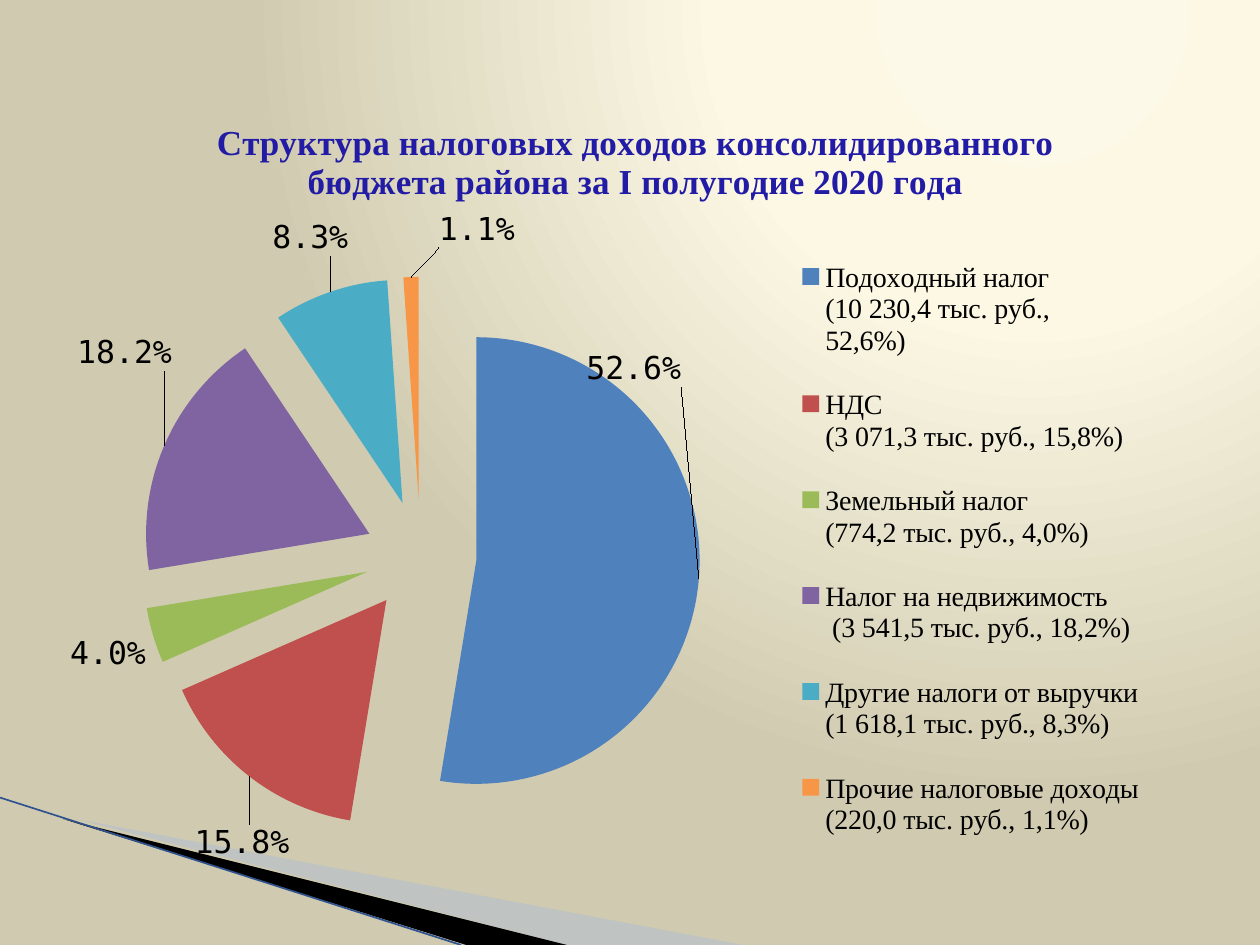
from dataclasses import dataclass

from lxml import etree
from pptx import Presentation
from pptx.chart.data import CategoryChartData
from pptx.dml.color import RGBColor
from pptx.enum.chart import XL_CHART_TYPE, XL_LABEL_POSITION, XL_LEGEND_POSITION
from pptx.enum.shapes import MSO_CONNECTOR
from pptx.oxml.ns import qn
from pptx.util import Inches, Pt

PIE = XL_CHART_TYPE.PIE
RIGHT = XL_LEGEND_POSITION.RIGHT
BEST = XL_LABEL_POSITION.BEST_FIT
STRAIGHT = MSO_CONNECTOR.STRAIGHT

COLS, ROWS = 100, 75
CELL = Inches(0.1)

TITLE = ("Структура налоговых доходов консолидированного "
         "бюджета района за I полугодие 2020 года")

# name, share, slice colour, label shift in percent of the chart
TAXES = [
    ("Подоходный налог\n(10 230,4 тыс. руб.,\n52,6%)", 0.526, "4F81BD", (-10, -27.2)),
    ("НДС\n(3 071,3 тыс. руб., 15,8%)", 0.158, "C0504D", (3.7, 5.5)),
    ("Земельный налог\n(774,2 тыс. руб., 4,0%)", 0.04, "9BBB59", (0, -0.2)),
    ("Налог на недвижимость\n (3 541,5 тыс. руб., 18,2%)", 0.182, "8064A2", (1.2, -9.2)),
    ("Другие налоги от выручки\n(1 618,1 тыс. руб., 8,3%)", 0.083, "4BACC6", (1.7, -3.7)),
    ("Прочие налоговые доходы\n(220,0 тыс. руб., 1,1%)", 0.011, "F79646", (5.5, -2.8)),
]


@dataclass(frozen=True)
class Theme:
    glow: tuple = ((0, "FDF9E8"), (40, "FCF8E4"), (100, "D0CBB0"))
    veil: str = "A7B9DB"
    dark: str = "000000"
    edge: str = "30538F"
    title: str = "221BA5"
    serif: str = "Times New Roman"
    mono: str = "DejaVu Sans Mono"
    big: int = 20
    mid: int = 18
    small: int = 16


def sub(node, tag, **attrs):
    return etree.SubElement(node, qn(tag), {k: str(v) for k, v in attrs.items()})


def style(font, size, face, color, bold=False):
    font.size, font.name, font.bold = Pt(size), face, bold
    font.color.rgb = RGBColor.from_string(color)


def place(node, index, x, y, w=None, h=None, inner=False, edge=True):
    """Give a chart part a manual layout, in percent of the chart."""
    for old in node.findall(qn("c:layout")):
        node.remove(old)
    layout = etree.Element(qn("c:layout"))
    node.insert(index, layout)
    box = sub(layout, "c:manualLayout")
    if inner:
        sub(box, "c:layoutTarget", val="inner")
    if edge:
        sub(box, "c:xMode", val="edge")
        sub(box, "c:yMode", val="edge")
    for tag, val in (("x", x), ("y", y), ("w", w), ("h", h)):
        if val is not None:
            sub(box, "c:" + tag, val=val / 100)


class Page:
    def __init__(self, deck, theme):
        self.theme = theme
        self.slide = deck.slides.add_slide(deck.slide_layouts[6])
        self.shapes = self.slide.shapes

    def back(self):
        self.slide.background.fill.gradient()
        grad = self.slide.background._cSld.find(".//" + qn("a:gradFill"))
        for child in list(grad):
            grad.remove(child)
        stops = sub(grad, "a:gsLst")
        for pos, color in self.theme.glow:
            sub(sub(stops, "a:gs", pos=pos * 1000), "a:srgbClr", val=color)
        ring = sub(grad, "a:path", path="circle")
        sub(ring, "a:fillToRect", l=65000, t=0, r=0, b=98000)

    def wedge(self, points, color, alpha=100):
        pen = self.shapes.build_freeform(*points[0], scale=CELL)
        pen.add_line_segments(points[1:], close=True)
        shape = pen.convert_to_shape()
        shape.shadow.inherit = False
        shape.line.fill.background()
        shape.fill.solid()
        shape.fill.fore_color.rgb = RGBColor.from_string(color)
        if alpha < 100:
            tone = shape._element.spPr.find(".//" + qn("a:srgbClr"))
            sub(tone, "a:alpha", val=alpha * 1000)

    def line(self, start, end, color, width):
        ends = [int(v * CELL) for v in (*start, *end)]
        rule = self.shapes.add_connector(STRAIGHT, *ends)
        rule.line.color.rgb = RGBColor.from_string(color)
        rule.line.width = Pt(width)
        sub(rule._element.spPr, "a:effectLst")

    def pie(self, box, title, rows):
        look = self.theme
        data = CategoryChartData(number_format="0.0%")
        data.categories = [row[0] for row in rows]
        data.add_series("Series 1", [row[1] for row in rows])
        frame = self.shapes.add_chart(PIE, *[int(v * CELL) for v in box], data)
        chart = frame.chart
        style(chart.font, look.mid, look.mono, look.dark)

        chart.has_title = True
        head = chart.chart_title
        head.include_in_layout = False
        head.text_frame.text = title
        style(head.text_frame.paragraphs[0].font, look.big, look.serif, look.title, True)
        place(head._element, 1, 14.6, 2.3)

        chart.has_legend = True
        key = chart.legend
        key.position = RIGHT
        key.include_in_layout = False
        style(key.font, look.small, look.serif, look.dark)
        place(key._element, 1, 62.4, 17.3, 31, 83.3)

        plot = chart.plots[0]
        plot.vary_by_categories = True
        place(chart._chartSpace.chart.plotArea, 0, 8.85, 23.3, 46.5, 72.4, inner=True)
        self.cut(plot.series[0], rows)

    def cut(self, series, rows):
        """Colour and pull out the slices, and set their labels."""
        tags = series.data_labels
        tags.show_value = True
        tags.number_format = "0.0%"
        tags.number_format_is_linked = False
        tags.position = BEST
        for i, (_, _, color, _) in enumerate(rows):
            point = series.points[i]
            point.format.fill.solid()
            point.format.fill.fore_color.rgb = RGBColor.from_string(color)
            point.data_label.position = BEST
        for tag, (*_, shift) in zip(series._element.iter(qn("c:dLbl")), rows):
            place(tag, 1, *shift, edge=False)
            form = etree.Element(qn("c:numFmt"), formatCode="0.0%", sourceLinked="0")
            tag.insert(2, form)
        burst = etree.Element(qn("c:explosion"), val="25")
        series._element.find(qn("c:dPt")).addprevious(burst)


def main():
    deck = Presentation()
    deck.slide_width, deck.slide_height = COLS * CELL, ROWS * CELL
    theme = Theme()
    page = Page(deck, theme)
    page.back()
    page.wedge([(5.5, 65), (58.9, 75), (45.2, 75)], theme.veil, 40)
    page.wedge([(5.3, 64.9), (45.2, 75), (36.7, 75)], theme.dark)
    page.line((0, 63.3), (36.6, 75), theme.edge, 0.95)
    page.pie((2.8, 7.6, 95.3, 61.4), TITLE, TAXES)
    deck.save("out.pptx")


if __name__ == "__main__":
    main()
